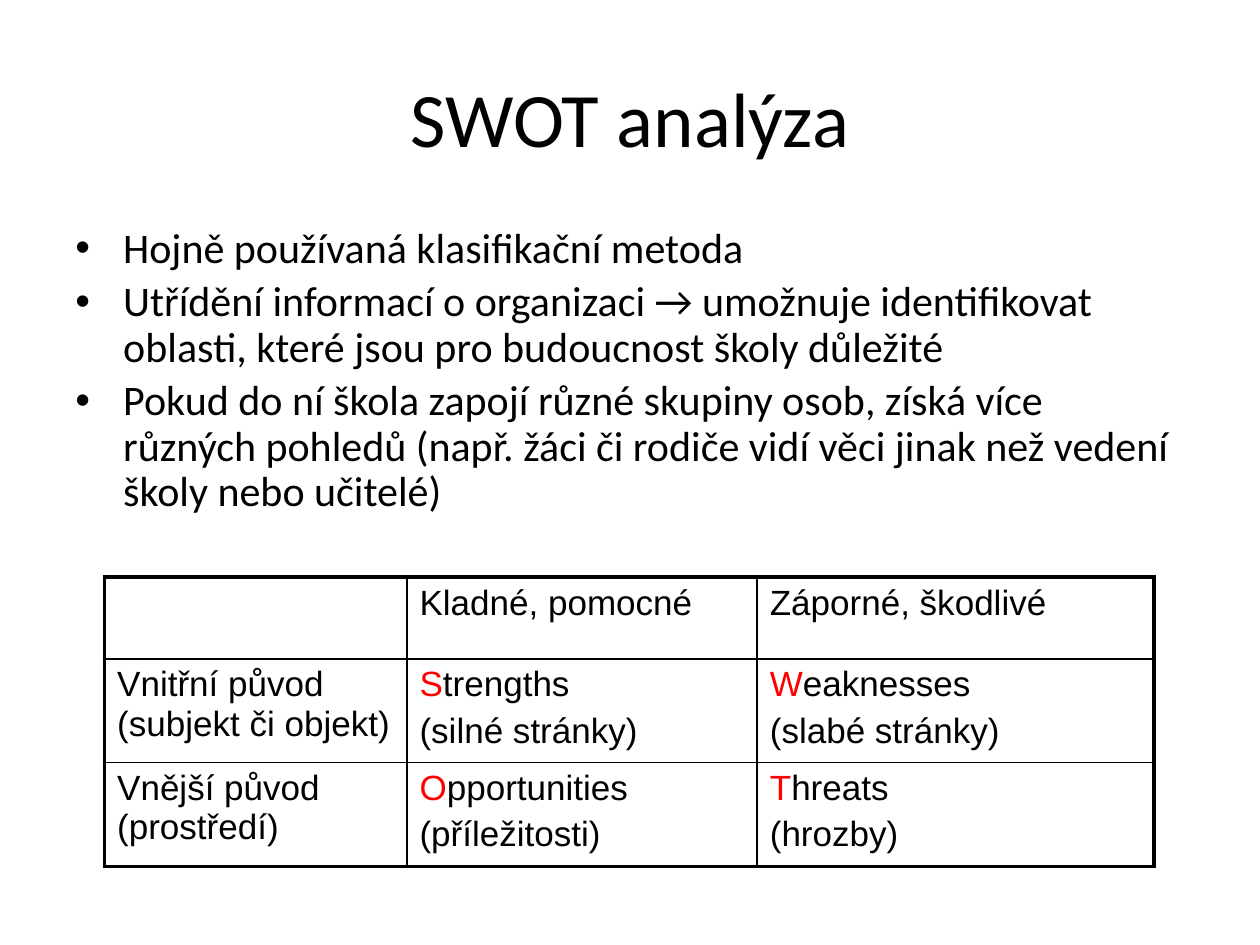
from typing import NamedTuple

from lxml import etree
from pptx import Presentation
from pptx import util as u
from pptx.enum import text
from pptx.dml.color import RGBColor
from pptx.oxml.ns import qn

COLORS = {"ink": "000000", "initial": "FF0000"}


class Style(NamedTuple):
    font: str
    size: int
    paragraph: dict


class Run(NamedTuple):
    words: str
    color: str = "ink"


class Quadrant(NamedTuple):
    initial: str
    rest: str
    meaning: str

    def paragraphs(self) -> list[list[Run]]:
        return [[Run(self.initial, "initial"), Run(self.rest)], [Run(self.meaning)]]


TITLE = Style("Calibri", 44, {"alignment": text.PP_ALIGN.CENTER})
POINT = Style("Calibri", 24, {"line_spacing": 0.9, "space_before": u.Pt(4.8)})
CELL = Style("Arial", 20, {"space_before": u.Pt(4)})

POINTS = [
    "Hojně používaná klasifikační metoda",
    "Utřídění informací o organizaci → umožnuje identifikovat oblasti, "
    "které jsou pro budoucnost školy důležité",
    "Pokud do ní škola zapojí různé skupiny osob, získá více různých pohledů "
    "(např. žáci či rodiče vidí věci jinak než vedení školy nebo učitelé)",
]
SWOT = [
    ["", "Kladné, pomocné", "Záporné, škodlivé"],
    ["Vnitřní původ (subjekt či objekt)",
     Quadrant("S", "trengths", "(silné stránky)"),
     Quadrant("W", "eaknesses", "(slabé stránky)")],
    ["Vnější původ (prostředí)",
     Quadrant("O", "pportunities", "(příležitosti)"),
     Quadrant("T", "hreats", "(hrozby)")],
]
COLUMN_WIDTHS = [2.4, 2.78, 3.15]
ROW_HEIGHTS = [0.65, 0.79, 0.79]
OUTER, INNER = 2.25, 1


def write(frame, paragraphs: list[list[Run]], style: Style) -> None:
    for index, runs in enumerate(paragraphs):
        paragraph = frame.add_paragraph() if index else frame.paragraphs[0]
        for name, value in style.paragraph.items():
            setattr(paragraph, name, value)
        paragraph.font.size = u.Pt(style.size)
        for words, color in runs:
            run = paragraph.add_run()
            run.text = words
            for name, value in {"name": style.font, "size": u.Pt(style.size)}.items():
                setattr(run.font, name, value)
            run.font.color.rgb = RGBColor.from_string(COLORS[color])


def add_text(slide, top: float, height: float, paragraphs: list[list[Run]],
             style: Style, anchor: text.MSO_ANCHOR):
    frame = slide.shapes.add_textbox(
        u.Inches(0.5), u.Inches(top), u.Inches(9), u.Inches(height)).text_frame
    frame.word_wrap = True
    frame.vertical_anchor = anchor
    write(frame, paragraphs, style)
    return frame


def add_bullets(frame, indent: u.Length) -> None:
    for paragraph in frame.paragraphs:
        properties = paragraph._p.get_or_add_pPr()
        properties.set("marL", str(indent))
        properties.set("indent", str(-indent))
        etree.SubElement(properties, qn("a:buFont"), typeface="Arial")
        etree.SubElement(properties, qn("a:buChar"), char="•")


def add_borders(cell, widths: dict[str, float]) -> None:
    properties = cell._tc.get_or_add_tcPr()
    for side, width in widths.items():
        line = etree.SubElement(properties, qn(f"a:ln{side}"), w=str(u.Pt(width)))
        fill = etree.SubElement(line, qn("a:solidFill"))
        etree.SubElement(fill, qn("a:srgbClr"), val=COLORS["ink"])


def add_swot_table(slide) -> None:
    last_row, last_column = len(ROW_HEIGHTS) - 1, len(COLUMN_WIDTHS) - 1
    table = slide.shapes.add_table(
        len(ROW_HEIGHTS), len(COLUMN_WIDTHS), u.Inches(0.83), u.Inches(4.58),
        u.Inches(sum(COLUMN_WIDTHS)), u.Inches(sum(ROW_HEIGHTS))).table
    table.first_row = table.horz_banding = False
    for column, width in zip(table.columns, COLUMN_WIDTHS):
        column.width = u.Inches(width)
    for row, height in zip(table.rows, ROW_HEIGHTS):
        row.height = u.Inches(height)
    for r, entries in enumerate(SWOT):
        for c, entry in enumerate(entries):
            cell = table.cell(r, c)
            if isinstance(entry, Quadrant):
                paragraphs = entry.paragraphs()
            else:
                paragraphs = [[Run(entry)] if entry else []]
            write(cell.text_frame, paragraphs, CELL)
            edges = {"L": c == 0, "R": c == last_column, "T": r == 0, "B": r == last_row}
            add_borders(cell, {side: OUTER if outer else INNER
                               for side, outer in edges.items()})
            cell.fill.background()


def main() -> None:
    deck = Presentation()
    deck.slide_width, deck.slide_height = u.Inches(10), u.Inches(7.5)
    slide = deck.slides.add_slide(deck.slide_layouts[6])
    add_text(slide, 0.3, 1.25, [[Run("SWOT analýza")]], TITLE, text.MSO_ANCHOR.MIDDLE)
    points = add_text(slide, 1.75, 4.95, [[Run(point)] for point in POINTS],
                      POINT, text.MSO_ANCHOR.TOP)
    add_bullets(points, u.Inches(0.38))
    add_swot_table(slide)
    deck.save("out.pptx")


if __name__ == "__main__":
    main()
